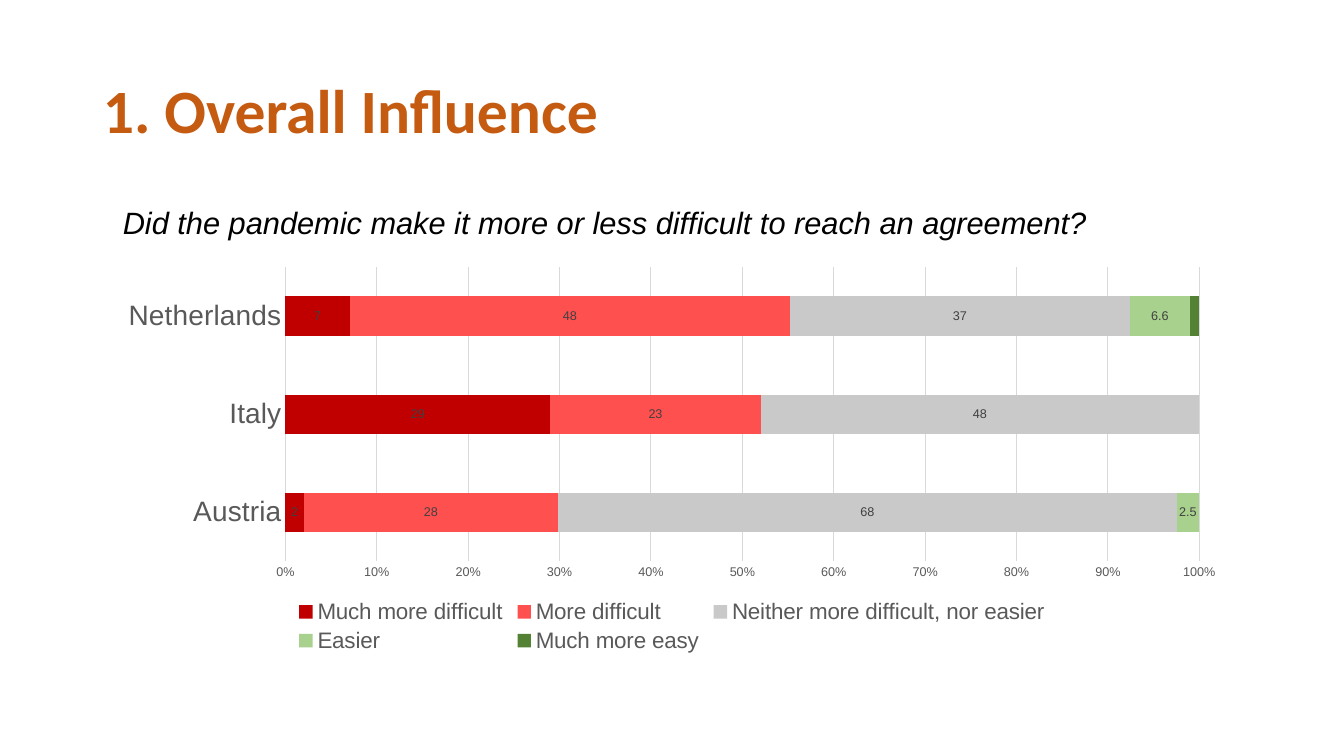
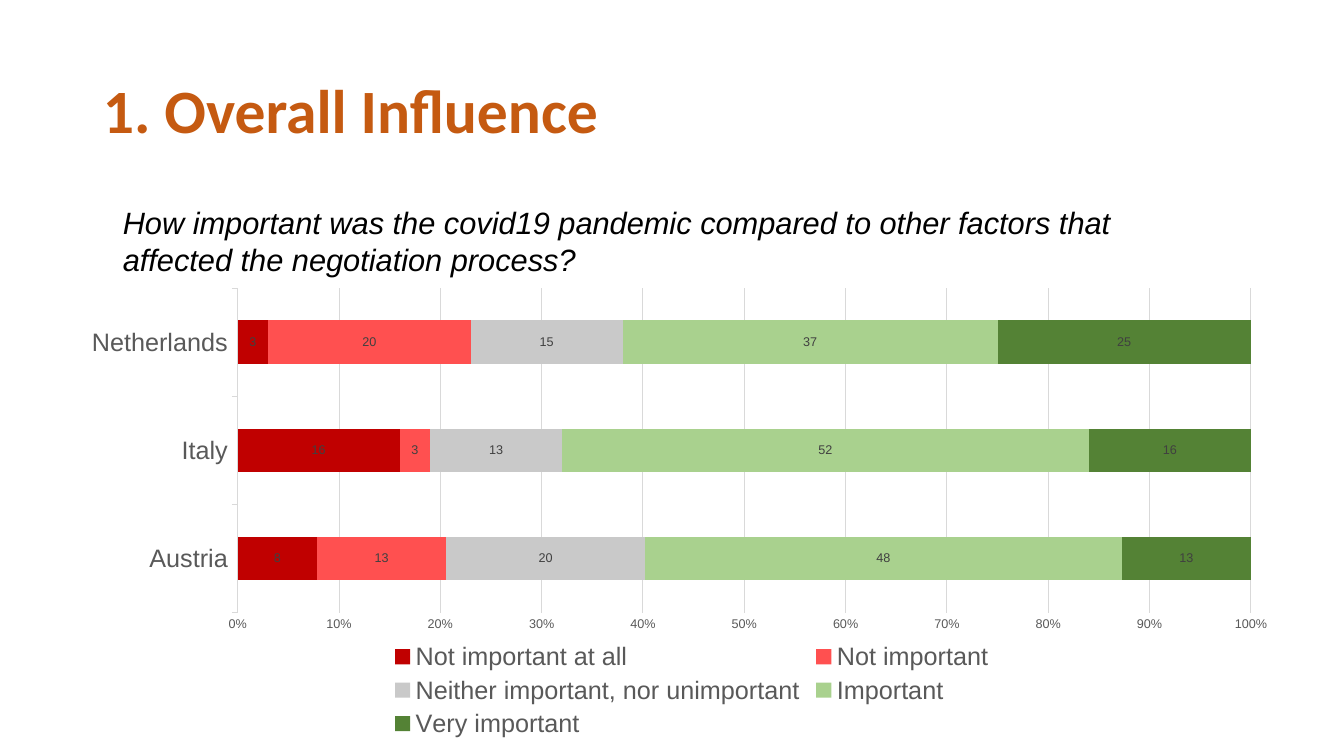
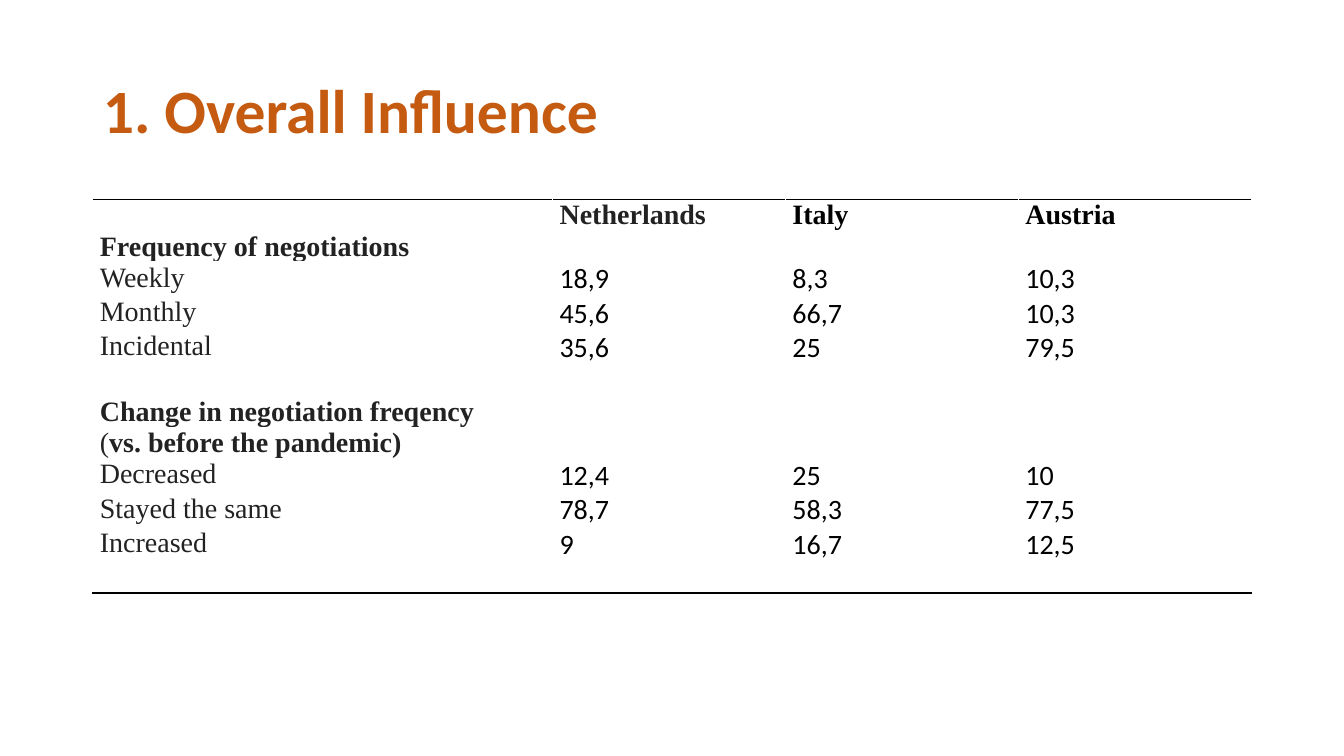
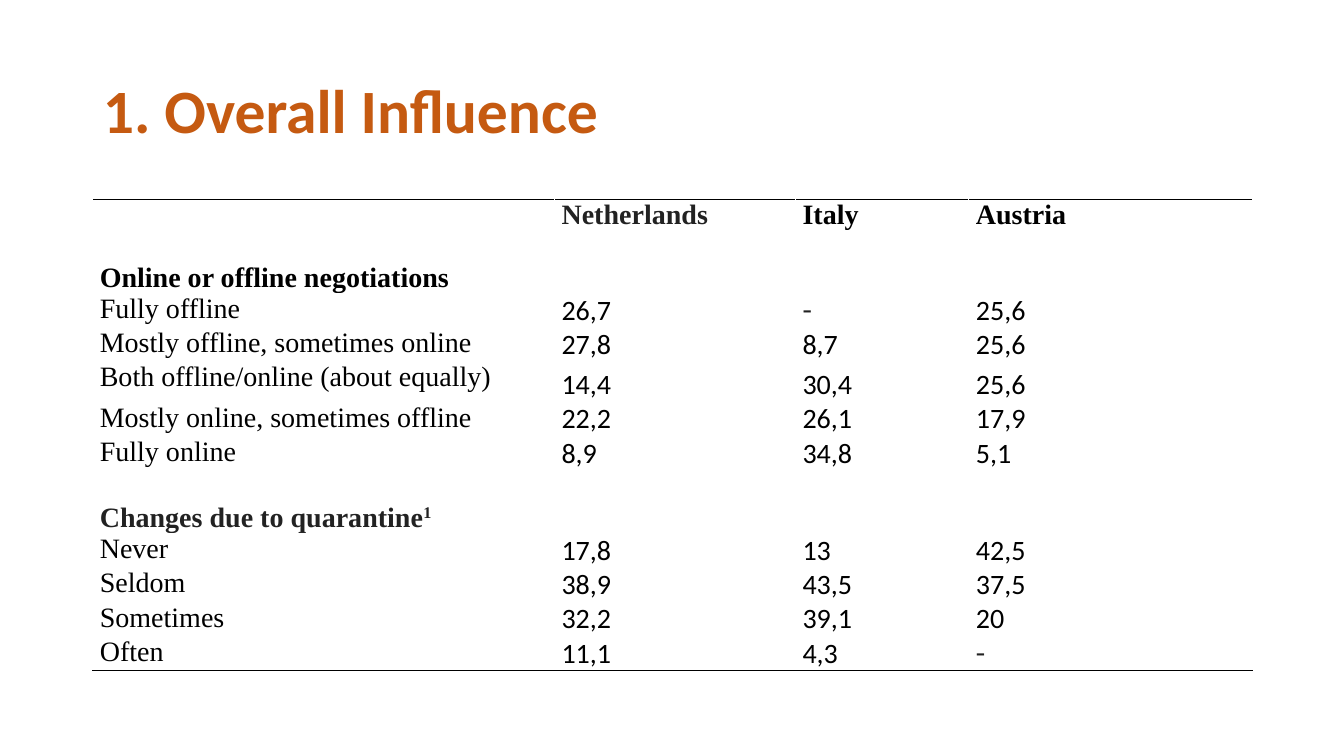
from dataclasses import dataclass

from lxml import etree
from pptx import Presentation
from pptx.chart.data import CategoryChartData
from pptx.dml.color import RGBColor
from pptx.enum.chart import XL_CHART_TYPE as ChartType
from pptx.enum.chart import XL_LEGEND_POSITION as LegendPosition
from pptx.enum.chart import XL_TICK_MARK as TickMark
from pptx.enum.text import MSO_ANCHOR as Anchor
from pptx.enum.text import MSO_AUTO_SIZE as AutoSize
from pptx.enum.text import PP_ALIGN as Align
from pptx.oxml import parse_xml
from pptx.oxml.ns import nsdecls, qn
from pptx.util import Inches, Pt


@dataclass(frozen=True)
class Theme:
    heading: str = "C55A11"
    black: str = "000000"
    ink: str = "222222"
    axis_text: str = "595959"
    label_text: str = "404040"
    grid: str = "D9D9D9"
    scale: tuple = ("C00000", "FF5050", "C9C9C9", "A9D18E", "548235")
    sans: str = "Arial"
    title_face: str = "Calibri"
    serif: str = "Times New Roman"
    title_size: int = 44
    question_size: int = 22
    table_size: int = 20
    small_size: int = 9


theme = Theme()
COUNTRIES = ["Austria", "Italy", "Netherlands"]

deck = Presentation()
deck.slide_width, deck.slide_height = Inches(13.33), Inches(7.5)


def style(font, face, size, color, bold=False, italic=False):
    font.name, font.size = face, Pt(size)
    font.color.rgb = RGBColor.from_string(color)
    font.bold, font.italic = bold, italic


def add_titled_slide():
    slide = deck.slides.add_slide(deck.slide_layouts[5])
    title = slide.shapes.title
    title.left, title.top = Inches(0.92), Inches(0.4)
    title.width, title.height = Inches(11.5), Inches(1.45)
    frame = title.text_frame
    frame.text = "1. Overall Influence"
    frame.auto_size = AutoSize.NONE
    frame.vertical_anchor = Anchor.MIDDLE
    heading = frame.paragraphs[0]
    heading.alignment, heading.line_spacing = Align.LEFT, 0.9
    style(heading.runs[0].font, theme.title_face, theme.title_size, theme.heading, bold=True)
    return slide


# Survey questions: one stacked bar chart each
questions = [
    dict(
        text="Did the pandemic make it more or less difficult to reach an agreement?",
        height=0.47, place=(1.05, 2.57, 11.23, 3.95),
        country_size=20, legend_size=16, tick=TickMark.NONE, plot=None,
        answers={
            "Much more difficult": (2, 29, 7),
            "More difficult": (28, 23, 48),
            "Neither more difficult, nor easier": (68, 48, 37),
            "Easier": (2.5, None, 6.6),
            "Much more easy": (None, None, 1),
        },
        formats=("0", "0", "0", "General", None),
    ),
    dict(
        text="How important was the covid19 pandemic compared to other factors that "
             "affected the negotiation process?",
        height=0.84, place=(0.71, 2.57, 12.3, 4.8),
        country_size=18, legend_size=18, tick=TickMark.OUTSIDE,
        plot=dict(x=0.134, y=0.06, w=0.817, h=0.671),
        answers={
            "Not important at all": (8, 16, 3),
            "Not important": (13, 3, 20),
            "Neither important, nor unimportant": (20, 13, 15),
            "Important": (48, 52, 37),
            "Very important": (13, 16, 25),
        },
        formats=("0",) * 5,
    ),
]

for question in questions:
    slide = add_titled_slide()

    # Question line
    box = slide.shapes.add_textbox(
        Inches(1.12), Inches(1.97), Inches(11.1), Inches(question["height"]))
    frame = box.text_frame
    frame.word_wrap = True
    frame.auto_size = AutoSize.SHAPE_TO_FIT_TEXT
    frame.text = question["text"]
    style(frame.paragraphs[0].runs[0].font, theme.sans, theme.question_size,
          theme.black, italic=True)

    # Chart
    answers = CategoryChartData()
    answers.categories = COUNTRIES
    for answer, shares in question["answers"].items():
        answers.add_series(answer, shares)
    chart = slide.shapes.add_chart(
        ChartType.BAR_STACKED_100, *map(Inches, question["place"]), answers).chart
    chart.has_title = False
    style(chart.font, theme.sans, 10, theme.black)

    bars = chart.plots[0]
    bars.gap_width, bars.overlap, bars.vary_by_categories = 150, 100, False
    for series, color, label_format in zip(bars.series, theme.scale, question["formats"]):
        series.format.fill.solid()
        series.format.fill.fore_color.rgb = RGBColor.from_string(color)
        if label_format:
            labels = series.data_labels
            labels.show_value = True
            labels.number_format, labels.number_format_is_linked = label_format, False
            style(labels.font, theme.sans, theme.small_size, theme.label_text)

    # Axes
    countries, percent = chart.category_axis, chart.value_axis
    style(countries.tick_labels.font, theme.sans, question["country_size"], theme.axis_text)
    style(percent.tick_labels.font, theme.sans, theme.small_size, theme.axis_text)
    countries.major_tick_mark = question["tick"]
    percent.major_tick_mark = TickMark.NONE
    percent.tick_labels.number_format = "0%"
    percent.tick_labels.number_format_is_linked = False
    percent.has_major_gridlines = True
    for line in (countries.format.line, percent.major_gridlines.format.line):
        line.width = Pt(0.75)
        line.color.rgb = RGBColor.from_string(theme.grid)
    percent.format.line.fill.background()

    # Legend
    chart.has_legend = True
    chart.legend.position = LegendPosition.BOTTOM
    chart.legend.include_in_layout = False
    style(chart.legend.font, theme.sans, question["legend_size"], theme.axis_text)

    # Fixed inner plot area
    if question["plot"]:
        area = chart.plots[0]._element.getparent()
        for layout in area.findall(qn("c:layout")):
            area.remove(layout)
        layout = parse_xml(f'<c:layout {nsdecls("c")}><c:manualLayout/></c:layout>')
        settings = dict(layoutTarget="inner", xMode="edge", yMode="edge", **question["plot"])
        for setting, value in settings.items():
            etree.SubElement(layout[0], qn(f"c:{setting}")).set("val", str(value))
        area.insert(0, layout)

# Result tables: label parts, then one value per country
results = [
    dict(
        columns=(4.56, 2.31, 2.31, 2.31), label_color=theme.ink,
        special_heights={0: 0.62},
        rows=[
            (["Frequency of negotiations"], "Netherlands", "Italy", "Austria"),
            (["Weekly"], "18,9", "8,3", "10,3"),
            (["Monthly"], "45,6", "66,7", "10,3"),
            (["Incidental"], "35,6", "25", "79,5"),
            ([],),
            (["Change in negotiation freqency"],),
            (["(", "vs. before the pandemic)"],),
            (["Decreased"], "12,4", "25", "10"),
            (["Stayed the same"], "78,7", "58,3", "77,5"),
            (["Increased"], "9", "16,7", "12,5"),
            ([],),
        ],
    ),
    dict(
        columns=(4.58, 2.39, 1.72, 2.81), label_color=theme.black,
        special_heights={0: 0.31, 5: 0.4},
        rows=[
            ([], "Netherlands", "Italy", "Austria"),
            ([],),
            (["Online or offline negotiations"],),
            (["Fully offline"], "26,7", "-", "25,6"),
            (["Mostly offline, sometimes online"], "27,8", "8,7", "25,6"),
            (["Both offline/online (about equally)"], "14,4", "30,4", "25,6"),
            (["Mostly online, sometimes offline"], "22,2", "26,1", "17,9"),
            (["Fully online"], "8,9", "34,8", "5,1"),
            ([],),
            (["Changes due to quarantine", "1"],),
            (["Never"], "17,8", "13", "42,5"),
            (["Seldom"], "38,9", "43,5", "37,5"),
            (["Sometimes"], "32,2", "39,1", "20"),
            (["Often"], "11,1", "4,3", "-"),
        ],
    ),
]

tables = []
for result in results:
    rows, columns = result["rows"], result["columns"]
    slide = add_titled_slide()
    table = slide.shapes.add_table(
        len(rows), len(columns), Inches(0.92), Inches(1.98), Inches(11.5), Inches(4)).table
    table.first_row = table.horz_banding = False
    tables.append(table)
    for column, width in zip(table.columns, columns):
        column.width = Inches(width)

    for r, (label, *values) in enumerate(rows):
        is_header, is_heading = r == 0, not values
        height = 0.31 if is_heading else 0.34
        table.rows[r].height = Inches(result["special_heights"].get(r, height))
        contents = [label] + [[value] for value in values]
        contents += [[]] * (len(columns) - len(contents))

        for c, parts in enumerate(contents):
            cell = table.cell(r, c)
            cell.fill.background()
            cell.margin_left = cell.margin_right = Inches(0.07)
            cell.margin_top = cell.margin_bottom = 0
            is_number = c > 0 and not is_header and parts != ["-"]
            at_bottom = is_number or (is_header and c == 0)
            cell.vertical_anchor = Anchor.BOTTOM if at_bottom else Anchor.TOP

            # Text
            paragraph = cell.text_frame.paragraphs[0]
            paragraph.alignment = Align.JUSTIFY
            face = theme.title_face if is_number else theme.serif
            if c == 0:
                color = result["label_color"]
            elif parts == ["-"] or (is_header and c == 1):
                color = theme.ink
            else:
                color = theme.black
            for part in parts:
                run = paragraph.add_run()
                run.text = part
                style(run.font, face, theme.table_size, color, bold=is_header or is_heading)

            # Rule above the first row and below the last
            edge = {0: "lnT", len(rows) - 1: "lnB"}.get(r)
            if edge:
                cell._tc.get_or_add_tcPr().insert(0, parse_xml(
                    f'<a:{edge} {nsdecls("a")} w="12700"><a:solidFill>'
                    f'<a:srgbClr val="{theme.black}"/></a:solidFill></a:{edge}>'))

# Heading details: light bracket, dark grey heading with a raised note mark
frequency, online = tables
frequency.cell(6, 0).text_frame.paragraphs[0].runs[0].font.bold = False
quarantine = online.cell(9, 0).text_frame.paragraphs[0].runs
for run in quarantine:
    run.font.color.rgb = RGBColor.from_string(theme.ink)
quarantine[1].font._element.set("baseline", "30000")

deck.save("out.pptx")
